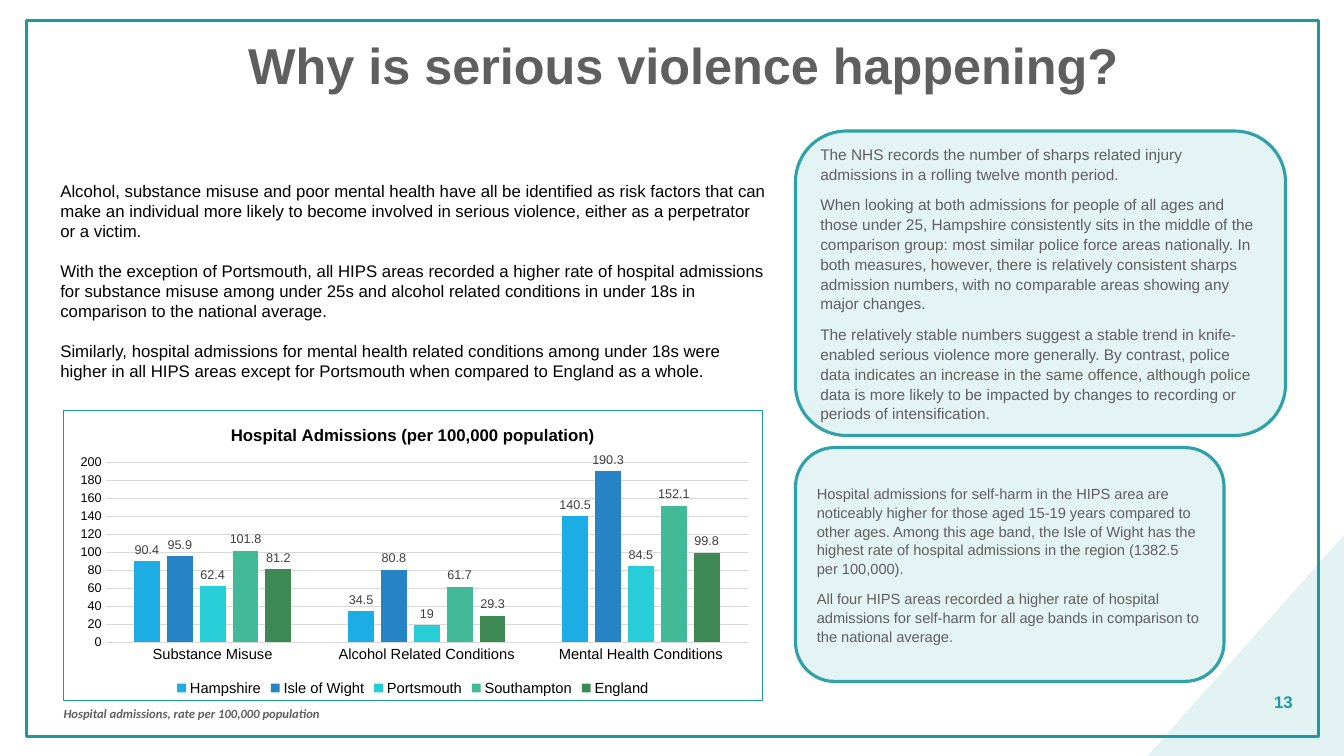
from lxml import etree
from pptx import Presentation
from pptx import util as u
from pptx.chart import data as chart_data
from pptx.dml.color import RGBColor
from pptx.enum import chart as charts, shapes, text
from pptx.oxml import parse_xml
from pptx.oxml.ns import nsdecls, qn

TEAL = RGBColor(0x1D, 0x99, 0xA0)
PANEL_LINE = RGBColor(0x2F, 0xA1, 0xA8)
PANEL_FILL = RGBColor(0xE4, 0xF3, 0xF3)
GREY = RGBColor(0x5F, 0x5F, 0x5F)
LABEL_GREY = RGBColor(0x40, 0x40, 0x40)
GRID_GREY = RGBColor(0xD9, 0xD9, 0xD9)
BLACK = RGBColor(0, 0, 0)
WHITE = RGBColor(0xFF, 0xFF, 0xFF)

RISK_FACTORS = [
    "Alcohol, substance misuse and poor mental health have all be identified as risk factors that can "
    "make an individual more likely to become involved in serious violence, either as a perpetrator or a victim.",
    "With the exception of Portsmouth, all HIPS areas recorded a higher rate of hospital admissions for "
    "substance misuse among under 25s and alcohol related conditions in under 18s in comparison to the "
    "national average.",
    "Similarly, hospital admissions for mental health related conditions among under 18s were higher in all "
    "HIPS areas except for Portsmouth when compared to England as a whole.",
]
SHARPS = [
    "The NHS records the number of sharps related injury admissions in a rolling twelve month period.",
    "When looking at both admissions for people of all ages and those under 25, Hampshire consistently sits "
    "in the middle of the comparison group: most similar police force areas nationally. In both measures, "
    "however, there is relatively consistent sharps admission numbers, with no comparable areas showing any "
    "major changes.",
    "The relatively stable numbers suggest a stable trend in knife-enabled serious violence more generally. "
    "By contrast, police data indicates an increase in the same offence, although police data is more likely "
    "to be impacted by changes to recording or periods of intensification.",
]
SELF_HARM = [
    "Hospital admissions for self-harm in the HIPS area are noticeably higher for those aged 15-19 years "
    "compared to other ages. Among this age band, the Isle of Wight has the highest rate of hospital "
    "admissions in the region (1382.5 per 100,000).",
    "All four HIPS areas recorded a higher rate of hospital admissions for self-harm for all age bands in "
    "comparison to the national average.",
]
CONDITIONS = ["Substance Misuse", "Alcohol Related Conditions", "Mental Health Conditions"]
ADMISSIONS = [
    ("Hampshire", (90.4, 34.5, 140.5), RGBColor(0x1C, 0xAD, 0xE4)),
    ("Isle of Wight", (95.9, 80.8, 190.3), RGBColor(0x26, 0x83, 0xC6)),
    ("Portsmouth", (62.4, 19, 84.5), RGBColor(0x27, 0xCE, 0xD7)),
    ("Southampton", (101.8, 61.7, 152.1), RGBColor(0x42, 0xBA, 0x97)),
    ("England", (81.2, 29.3, 99.8), RGBColor(0x3E, 0x88, 0x53)),
]


def inches(*lengths):
    return [u.Inches(length) for length in lengths]


def set_all(target, values):
    for name, value in values.items():
        setattr(target, name, value)


class SlideBuilder:
    def __init__(self, slide, font="Arial"):
        self.slide = slide
        self.font = font

    def style_font(self, font, size, color, **extra):
        set_all(font, {"name": self.font, "size": u.Pt(size), **extra})
        font.color.rgb = color

    def fill_text(self, frame, paragraphs, size, color, layout=None, frame_format=None, **extra):
        """Fill a text frame; layout holds paragraph values, extra holds font values."""
        set_all(frame, {"word_wrap": True, **(frame_format or {})})
        for index, content in enumerate(paragraphs):
            paragraph = frame.paragraphs[0] if index == 0 else frame.add_paragraph()
            set_all(paragraph, {"alignment": text.PP_ALIGN.LEFT, **(layout or {})})
            run = paragraph.add_run()
            run.text = content
            self.style_font(run.font, size, color, **extra)

    def title(self, box, content):
        title = self.slide.shapes.title
        set_all(title, dict(zip(("left", "top", "width", "height"), inches(*box))))
        self.fill_text(title.text_frame, [content], 36, GREY, {"line_spacing": 0.9},
                       {"vertical_anchor": text.MSO_ANCHOR.MIDDLE, "auto_size": text.MSO_AUTO_SIZE.NONE},
                       bold=True)

    def text_box(self, box, paragraphs, size, color, **options):
        shape = self.slide.shapes.add_textbox(*inches(*box))
        self.fill_text(shape.text_frame, paragraphs, size, color, **options)

    def shape(self, kind, box, fill=None, line=None, rotation=0):
        shape = self.slide.shapes.add_shape(kind, *inches(*box))
        shape.shadow.inherit = False
        shape.rotation = rotation
        if fill is None:
            shape.fill.background()
        else:
            shape.fill.solid()
            shape.fill.fore_color.rgb = fill
        if line is None:
            shape.line.fill.background()
        else:
            shape.line.color.rgb = line
            shape.line.width = u.Pt(2.25)
        return shape

    def corner(self, box, opacity):
        triangle = self.shape(shapes.MSO_SHAPE.RIGHT_TRIANGLE, box, fill=TEAL, rotation=270)
        color = triangle._element.spPr.find(qn("a:solidFill"))[0]
        etree.SubElement(color, qn("a:alpha"), val=str(opacity * 1000))

    def panel(self, box, paragraphs, size):
        panel = self.shape(shapes.MSO_SHAPE.ROUNDED_RECTANGLE, box, PANEL_FILL, PANEL_LINE)
        self.fill_text(panel.text_frame, paragraphs, size, GREY,
                       {"line_spacing": 1.07, "space_after": u.Pt(8)},
                       {"vertical_anchor": text.MSO_ANCHOR.MIDDLE})

    def column_chart(self, box, title, categories, series_rows):
        data = chart_data.CategoryChartData()
        data.categories = categories
        for name, values, _ in series_rows:
            data.add_series(name, values)
        chart = self.slide.shapes.add_chart(
            charts.XL_CHART_TYPE.COLUMN_CLUSTERED, *inches(*box), data).chart
        self.style_font(chart.font, 10, BLACK)
        title_frame = chart.chart_title.text_frame
        title_frame.text = title
        self.style_font(title_frame.paragraphs[0].runs[0].font, 12, BLACK, bold=True)

        chart.has_legend = True
        set_all(chart.legend, {"position": charts.XL_LEGEND_POSITION.BOTTOM, "include_in_layout": False})
        self.style_font(chart.legend.font, 10.5, BLACK)

        for axis, size in ((chart.category_axis, 10.5), (chart.value_axis, 9)):
            axis.major_tick_mark = charts.XL_TICK_MARK.NONE
            self.style_font(axis.tick_labels.font, size, BLACK)
        set_all(chart.value_axis, {"minimum_scale": 0, "maximum_scale": 200, "major_unit": 20})
        chart.value_axis.format.line.fill.background()
        for line in (chart.category_axis.format.line, chart.value_axis.major_gridlines.format.line):
            line.color.rgb = GRID_GREY
            line.width = u.Pt(0.75)

        plot = chart.plots[0]
        set_all(plot, {"gap_width": 219, "overlap": -27, "vary_by_categories": False})
        for series, (_, _, color) in zip(plot.series, series_rows):
            series.format.fill.solid()
            series.format.fill.fore_color.rgb = color
            labels = series.data_labels
            set_all(labels, {"show_value": True, "position": charts.XL_LABEL_POSITION.OUTSIDE_END})
            self.style_font(labels.font, 9, LABEL_GREY)
        self.frame_chart(chart, (0.06, 0.18, 0.92, 0.62))

    def frame_chart(self, chart, plot_box):
        """Place the inner plot by fractions of the chart, and draw the chart's fill and border."""
        space = chart._chartSpace
        plot_area = space.find(".//" + qn("c:plotArea"))
        for layout in plot_area.findall(qn("c:layout")):
            plot_area.remove(layout)
        sizes = "".join(f'<c:{name} val="{value}"/>' for name, value in zip("xywh", plot_box))
        plot_area.insert(0, parse_xml(
            f'<c:layout {nsdecls("c")}><c:manualLayout><c:layoutTarget val="inner"/>'
            f'<c:xMode val="edge"/><c:yMode val="edge"/>{sizes}</c:manualLayout></c:layout>'))
        space.find(qn("c:txPr")).addprevious(parse_xml(
            f'<c:spPr {nsdecls("c", "a")}><a:solidFill><a:srgbClr val="{WHITE}"/></a:solidFill>'
            f'<a:ln w="{u.Pt(0.25)}"><a:solidFill><a:srgbClr val="{TEAL}"/></a:solidFill></a:ln></c:spPr>'))


def main():
    presentation = Presentation()
    presentation.slide_width, presentation.slide_height = inches(13.33, 7.5)
    slide = presentation.slides.add_slide(presentation.slide_layouts[5])
    builder = SlideBuilder(slide)

    builder.shape(shapes.MSO_SHAPE.RECTANGLE, (0.26, 0.2, 12.82, 7.11), line=TEAL)
    builder.corner((11.26, 5.43, 2.19, 1.95), 12)
    builder.text_box((12.42, 6.76, 0.5, 0.4), ["13"], 12, TEAL, bold=True,
                     layout={"alignment": text.PP_ALIGN.RIGHT},
                     frame_format={"vertical_anchor": text.MSO_ANCHOR.MIDDLE})
    builder.title((2.36, 0.19, 10.55, 0.97), "Why is serious violence happening?")
    builder.column_chart((0.63, 4.07, 6.93, 2.88), "Hospital Admissions (per 100,000 population)",
                         CONDITIONS, ADMISSIONS)
    builder.text_box((0.5, 1.74, 7.22, 2.12), RISK_FACTORS, 12, BLACK, layout={"space_after": u.Pt(14)})
    no_margins = dict.fromkeys(("margin_left", "margin_top", "margin_right", "margin_bottom"), 0)
    builder.text_box((0.63, 7, 2.69, 0.15), ["Hospital admissions, rate per 100,000 population"], 9, GREY,
                     frame_format=no_margins, name="Calibri", bold=True, italic=True)
    builder.panel((7.89, 1.3, 4.86, 3.02), SHARPS, 11)
    builder.panel((7.89, 4.44, 4.25, 2.32), SELF_HARM, 10.5)
    presentation.save("out.pptx")


if __name__ == "__main__":
    main()
